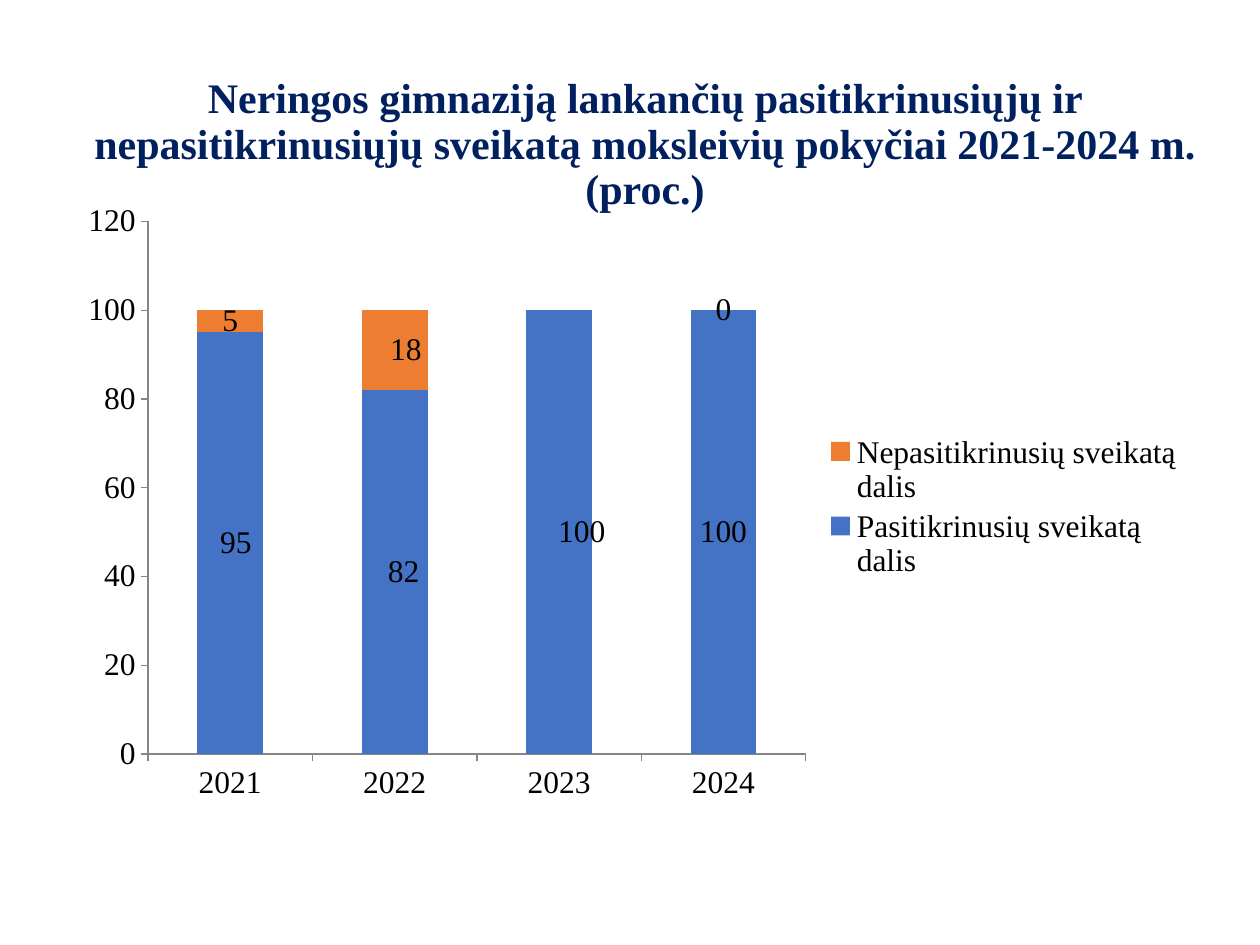
from dataclasses import dataclass, field

from lxml.etree import SubElement
from pptx import Presentation
from pptx.chart.data import CategoryChartData
from pptx.dml.color import RGBColor
from pptx.enum.chart import XL_CHART_TYPE, XL_LEGEND_POSITION, XL_TICK_MARK
from pptx.enum.text import MSO_ANCHOR, MSO_AUTO_SIZE, PP_ALIGN
from pptx.oxml.ns import qn
from pptx.util import Inches, Pt

NAVY = RGBColor(0x00, 0x20, 0x60)
BLACK = RGBColor(0x00, 0x00, 0x00)
BLUE = RGBColor(0x44, 0x72, 0xC4)
ORANGE = RGBColor(0xED, 0x7D, 0x31)
AXIS_GRAY = RGBColor(0x86, 0x86, 0x86)
FONT_NAME = "Times New Roman"
TITLE = ("Neringos gimnaziją lankančių pasitikrinusiųjų ir nepasitikrinusiųjų "
         "sveikatą moksleivių pokyčiai 2021-2024 m. (proc.)")
YEARS = ["2021", "2022", "2023", "2024"]


@dataclass
class PupilShare:
    name: str
    values: list[int]
    color: RGBColor
    label_shifts: dict[int, float] = field(default_factory=dict)
    hidden_labels: list[int] = field(default_factory=list)


SHARES = [
    PupilShare("Pasitikrinusių sveikatą dalis", [95, 82, 100, 100], BLUE,
               label_shifts={0: 0.005, 1: 0.008, 2: 0.02}),
    PupilShare("Nepasitikrinusių sveikatą dalis", [5, 18, 0, 0], ORANGE,
               label_shifts={1: 0.01}, hidden_labels=[2]),
]


def style_font(font, size: int = 18, color: RGBColor = BLACK, bold: bool = False) -> None:
    font.name = FONT_NAME
    font.size = Pt(size)
    font.bold = bold
    font.color.rgb = color


def add_layout(parent, position: int, settings: dict) -> None:
    """Insert a manual chart layout as the given child of parent."""
    layout = SubElement(parent, qn("c:layout"))
    parent.insert(position, layout)
    manual = SubElement(layout, qn("c:manualLayout"))
    for tag, value in settings.items():
        SubElement(manual, qn(f"c:{tag}")).set("val", str(value))


def point_label_element(series, index: int):
    style_font(series.points[index].data_label.font)
    labels = series.data_labels._element
    return next(label for label in labels.findall(qn("c:dLbl"))
                if label.find(qn("c:idx")).get("val") == str(index))


def format_series(series, share: PupilShare) -> None:
    series.format.fill.solid()
    series.format.fill.fore_color.rgb = share.color
    series.invert_if_negative = False
    series.data_labels.show_value = True
    style_font(series.data_labels.font)
    for index, shift in share.label_shifts.items():
        add_layout(point_label_element(series, index), 1, {"x": shift, "y": 0})
    for index in share.hidden_labels:
        label = point_label_element(series, index)
        for child in list(label)[1:]:
            label.remove(child)
        SubElement(label, qn("c:delete")).set("val", "1")


def format_axis(axis) -> None:
    axis.has_major_gridlines = False
    axis.major_tick_mark = XL_TICK_MARK.OUTSIDE
    axis.minor_tick_mark = XL_TICK_MARK.NONE
    axis.format.line.color.rgb = AXIS_GRAY
    axis.format.line.width = Pt(0.75)
    style_font(axis.tick_labels.font)


def add_title(slide) -> None:
    title = slide.shapes.title
    title.left, title.top = Inches(0.43), Inches(0.53)
    title.width, title.height = Inches(9.38), Inches(1.25)
    frame = title.text_frame
    frame.word_wrap = True
    frame.auto_size = MSO_AUTO_SIZE.NONE
    frame.vertical_anchor = MSO_ANCHOR.MIDDLE
    paragraph = frame.paragraphs[0]
    paragraph.alignment = PP_ALIGN.CENTER
    paragraph.line_spacing = 0.9
    run = paragraph.add_run()
    run.text = TITLE
    style_font(run.font, 24, NAVY, bold=True)


def add_share_chart(slide) -> None:
    chart_data = CategoryChartData()
    chart_data.categories = YEARS
    for share in SHARES:
        chart_data.add_series(share.name, share.values)
    chart = slide.shapes.add_chart(
        XL_CHART_TYPE.COLUMN_STACKED, Inches(0.5), Inches(1.55),
        Inches(9), Inches(4.95), chart_data).chart
    chart.has_title = False
    style_font(chart.font)

    # Columns and their labels
    plot = chart.plots[0]
    plot.gap_width, plot.overlap = 150, 100
    plot.vary_by_categories = False
    for series, share in zip(plot.series, SHARES):
        format_series(series, share)

    # Axes
    for axis in (chart.category_axis, chart.value_axis):
        format_axis(axis)
    chart.value_axis.minimum_scale = 0

    # Legend
    chart.has_legend = True
    chart.legend.position = XL_LEGEND_POSITION.RIGHT
    chart.legend.include_in_layout = False
    style_font(chart.legend.font)

    # Plot area placement
    plot_area = chart._chartSpace.chart.plotArea
    for layout in plot_area.findall(qn("c:layout")):
        plot_area.remove(layout)
    add_layout(plot_area, 0, {
        "layoutTarget": "inner", "xMode": "edge", "yMode": "edge",
        "x": 0.075, "y": 0.042, "w": 0.58, "h": 0.854})


def main() -> None:
    presentation = Presentation()
    presentation.slide_width, presentation.slide_height = Inches(10), Inches(7.5)
    slide = presentation.slides.add_slide(presentation.slide_layouts[5])
    add_title(slide)
    add_share_chart(slide)
    presentation.save("out.pptx")


if __name__ == "__main__":
    main()
